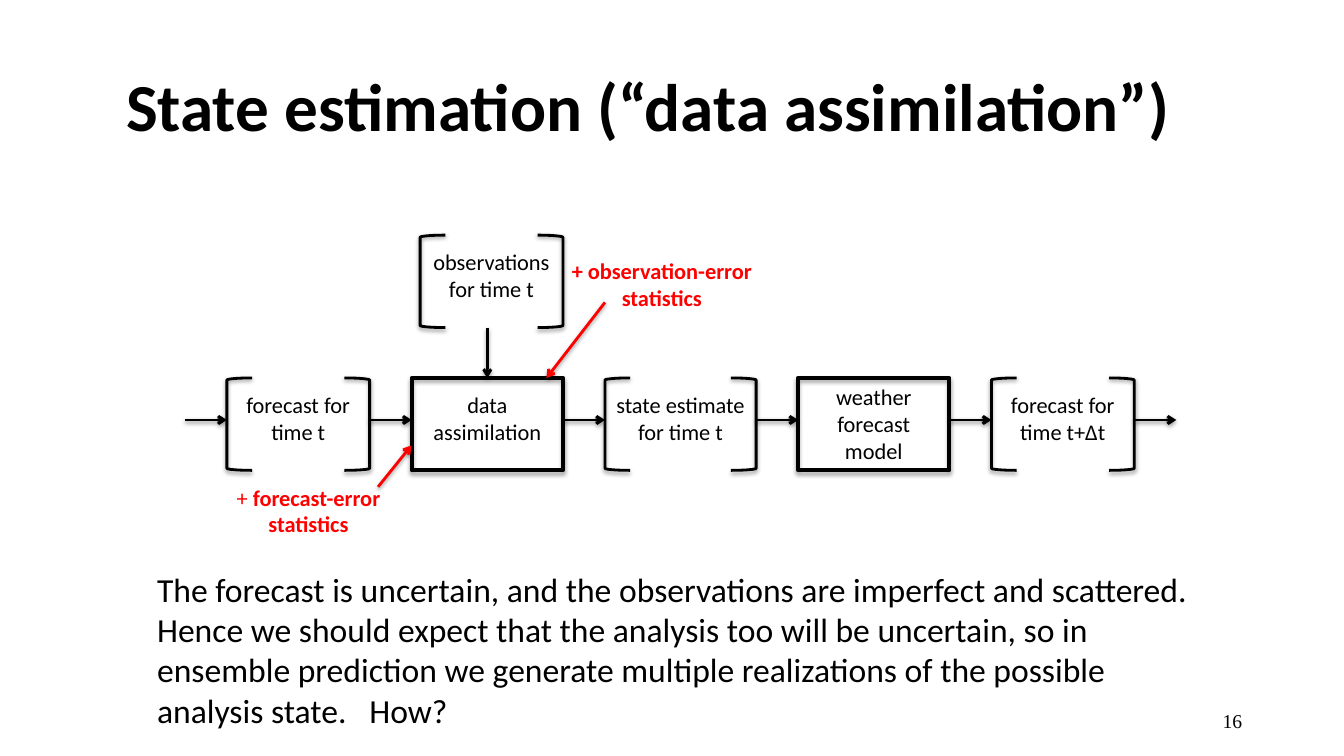
from dataclasses import dataclass

from lxml.etree import SubElement
from pptx import Presentation
from pptx.dml.color import RGBColor
from pptx.enum.shapes import MSO_CONNECTOR, MSO_SHAPE
from pptx.enum.text import MSO_ANCHOR, MSO_AUTO_SIZE, PP_ALIGN
from pptx.oxml.ns import qn
from pptx.util import Inches, Pt


@dataclass(frozen=True)
class Theme:
    ink: RGBColor = RGBColor(0, 0, 0)
    error: RGBColor = RGBColor(0xFF, 0, 0)
    font: str = "Calibri"
    number_font: str = "Times New Roman"
    title: int = 48
    body: int = 24
    label: int = 16
    number: int = 14
    frame: int = 3
    stroke: int = 2


THEME = Theme()
UNIT = 1 / 12  # the diagram sits on a grid of twelfths of an inch
GAP, STAGE_HEIGHT, BRACKET_WIDTH = 5 * UNIT, 11 * UNIT, 3 * UNIT
FLOW_LEFT, FLOW_TOP = 27 * UNIT, 45 * UNIT
ARROW_Y = FLOW_TOP + 5 * UNIT

# label paragraphs, width in grid units, whether it is a process
STAGES = [
    (["forecast for time t"], 17, False),
    (["data assimilation"], 18, True),
    (["state estimate for time t"], 18, False),
    (["weather", "forecast", "model"], 18, True),
    (["forecast for time t+Δt"], 17, False),
]

BODY = (
    "The forecast is uncertain, and the observations are imperfect and "
    "scattered.  Hence we should expect that the analysis too will be "
    "uncertain, so in ensemble prediction we generate multiple realizations "
    "of the possible analysis state.   How?"
)


def write(frame, paragraphs, size=THEME.label, color=THEME.ink, font=THEME.font,
          bold=False, align=PP_ALIGN.CENTER, anchor=MSO_ANCHOR.TOP, wrap=True,
          spacing=None):
    """Fill a text frame; a paragraph is a string or a list of (text, bold) runs."""
    frame.word_wrap = wrap
    frame.auto_size = MSO_AUTO_SIZE.NONE
    frame.vertical_anchor = anchor
    for index, content in enumerate(paragraphs):
        paragraph = frame.add_paragraph() if index else frame.paragraphs[0]
        paragraph.alignment = align
        if spacing:
            paragraph.line_spacing = spacing
        runs = [(content, bold)] if isinstance(content, str) else content
        for text, run_bold in runs:
            run = paragraph.add_run()
            run.text = text
            run.font.name = font
            run.font.size = Pt(size)
            run.font.bold = run_bold
            run.font.color.rgb = color


def add_text(slide, box, paragraphs, **formatting):
    text_box = slide.shapes.add_textbox(*map(Inches, box))
    write(text_box.text_frame, paragraphs, **formatting)


def set_outline(shape, color, width, opacity, distance):
    """Give the shape its line and a soft shadow straight below it."""
    shape.line.color.rgb = color
    shape.line.width = Pt(width)
    effects = SubElement(shape.element.spPr, qn("a:effectLst"))
    shadow = SubElement(effects, qn("a:outerShdw"), blurRad=str(Pt(3.1)),
                        dist=str(Pt(distance)), dir="5400000", rotWithShape="0")
    shade = SubElement(shadow, qn("a:srgbClr"), val=str(THEME.ink))
    SubElement(shade, qn("a:alpha"), val=str(opacity * 1000))


def add_arrow(slide, start, end, color=THEME.ink):
    arrow = slide.shapes.add_connector(
        MSO_CONNECTOR.STRAIGHT, *map(Inches, (*start, *end)))
    set_outline(arrow, color, THEME.stroke, opacity=38, distance=1.6)
    SubElement(arrow.element.spPr.find(qn("a:ln")), qn("a:tailEnd"), type="arrow")
    return arrow


def add_process(slide, box):
    process = slide.shapes.add_shape(MSO_SHAPE.RECTANGLE, *map(Inches, box))
    process.fill.background()
    set_outline(process, THEME.ink, THEME.frame, opacity=35, distance=1.8)
    return process


def add_brackets(slide, box):
    left, top, width, height = box
    for x, mirrored in ((left, False), (left + width - BRACKET_WIDTH, True)):
        bracket = slide.shapes.add_shape(
            MSO_SHAPE.LEFT_BRACKET,
            *map(Inches, (x, top, BRACKET_WIDTH, height)))
        bracket.adjustments[0] = 0.083
        bracket.fill.background()
        if mirrored:
            bracket.element.spPr.xfrm.set("flipH", "1")
        set_outline(bracket, THEME.ink, THEME.stroke, opacity=38, distance=1.6)


def add_stage(slide, box, label, is_process=False):
    """Draw a framed process or a bracketed quantity, with its label."""
    left, top, width, height = box
    frame = (add_process if is_process else add_brackets)(slide, box)
    inset = UNIT if len(label) == 1 else 0
    add_text(slide, (left, top + inset, width, height - inset), label)
    return frame


def add_flow(slide, left, top):
    """Draw the row of stages with arrows between; return the process frames."""
    processes = []
    add_arrow(slide, (left - GAP, ARROW_Y), (left, ARROW_Y))
    for label, units, is_process in STAGES:
        width = units * UNIT
        frame = add_stage(slide, (left, top, width, STAGE_HEIGHT), label, is_process)
        if is_process:
            processes.append(frame)
        left += width
        add_arrow(slide, (left, ARROW_Y), (left + GAP, ARROW_Y))
        left += GAP
    return processes


def add_observations(slide, box, assimilation):
    left, top, width, height = box
    add_stage(slide, box, ["observations for time t"])
    x = left + 8 * UNIT
    arrow = add_arrow(slide, (x, top + height), (x, FLOW_TOP))
    arrow.end_connect(assimilation, 0)


def add_error_note(slide, box, paragraphs, start, end):
    add_text(slide, box, paragraphs, color=THEME.error, bold=True, wrap=False)
    add_arrow(slide, start, end, THEME.error)


def add_title(slide, box, text):
    title = slide.shapes.title
    title.left, title.top, title.width, title.height = map(Inches, box)
    write(title.text_frame, [text], size=THEME.title, bold=True,
          align=PP_ALIGN.LEFT, anchor=MSO_ANCHOR.MIDDLE, spacing=0.9)


def main():
    presentation = Presentation()
    presentation.slide_width = Inches(13.33)
    presentation.slide_height = Inches(7.5)
    slide = presentation.slides.add_slide(presentation.slide_layouts[5])

    add_title(slide, (1.15, 0.46, 10.78, 1.25),
              "State estimation (“data assimilation”)")
    assimilation, _ = add_flow(slide, FLOW_LEFT, FLOW_TOP)
    add_observations(slide, (50 * UNIT, 28 * UNIT, 17 * UNIT, STAGE_HEIGHT),
                     assimilation)
    add_error_note(slide, (2.21, 4.75, 1.7, 0.64),
                   [[("+ ", False), ("forecast-error", True)], "statistics"],
                   start=(3.75, 4.83), end=(4.08, 4.42))
    add_error_note(slide, (5.53, 2.5, 2.07, 0.64),
                   ["+ observation-error", "statistics"],
                   start=(6, 3), end=(5.42, 3.75))
    add_text(slide, (1.46, 5.59, 10.58, 1.72), [BODY], size=THEME.body,
             align=PP_ALIGN.LEFT)
    add_text(slide, (9.42, 6.95, 3, 0.4), ["16"], size=THEME.number,
             font=THEME.number_font, align=PP_ALIGN.RIGHT,
             anchor=MSO_ANCHOR.MIDDLE)
    presentation.save("out.pptx")


if __name__ == "__main__":
    main()
